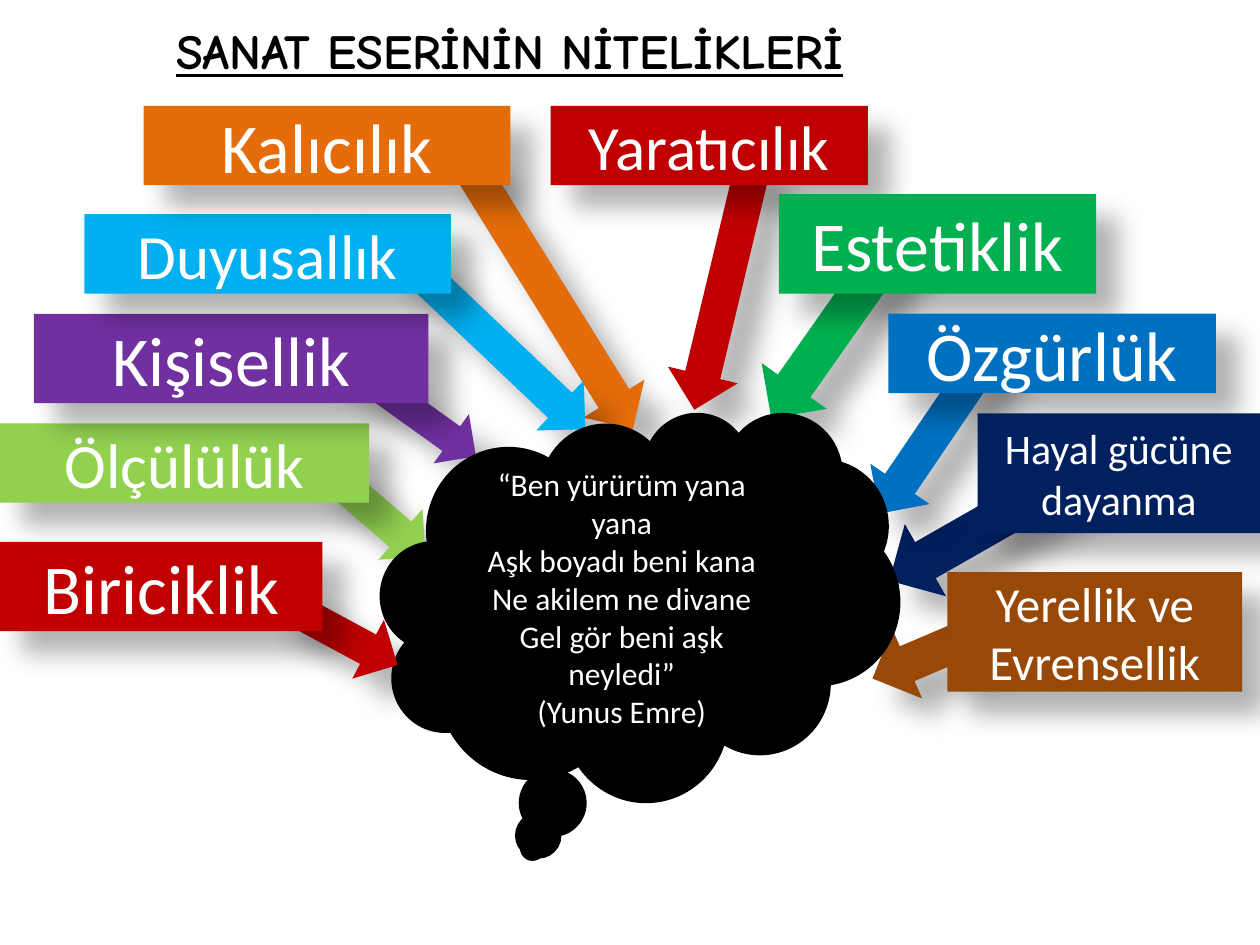
import pptx
import pptx.util
import pptx.dml.color
import pptx.enum.shapes
import pptx.enum.text
import pptx.oxml
import pptx.oxml.ns

Pt = pptx.util.Pt
SHAPE = pptx.enum.shapes.MSO_SHAPE
ALIGN = pptx.enum.text.PP_ALIGN
ANCHOR = pptx.enum.text.MSO_ANCHOR

COLORS = {
    "black": "000000", "white": "FFFFFF", "brown": "984807", "navy": "002060",
    "blue": "0070C0", "green": "00B050", "red": "C00000", "orange": "E46C0A",
    "sky": "00B0F0", "purple": "7030A0", "lime": "92D050",
}

TITLE = "SANAT ESERİNİN NİTELİKLERİ"
TITLE_BOX = (93.6, 7.9, 483.8, 41)
POEM = [
    "“Ben yürürüm yana yana",
    "Aşk boyadı beni kana",
    "Ne akilem ne divane",
    "Gel gör beni aşk neyledi”",
    "(Yunus Emre)",
]
CLOUD_BOX = (218.2, 236.2, 295.2, 221)

# preset, colour, (left, top, width, height), rotation
ARROWS = [
    (SHAPE.LEFT_ARROW, "brown", (493.9, 343.4, 115.9, 43.2), 336.9),
    (SHAPE.RIGHT_ARROW, "navy", (497.5, 267.8, 162.7, 47.5), 150.3),
    (SHAPE.DOWN_ARROW, "blue", (513.4, 192.2, 41, 110.9), 34.2),
    (SHAPE.DOWN_ARROW, "green", (454.3, 124.6, 45.4, 126), 35.1),
    (SHAPE.RIGHT_ARROW, "red", (341.3, 143.3, 144.7, 41), 103.5),
    (SHAPE.RIGHT_ARROW, "orange", (220.3, 146.2, 185, 41), 58.1),
    (SHAPE.RIGHT_ARROW, "sky", (205.9, 174.2, 149, 39.6), 43.5),
    (SHAPE.RIGHT_ARROW, "purple", (166.3, 209.5, 116.6, 34.6), 35.6),
    (SHAPE.RIGHT_ARROW, "lime", (175.7, 273.6, 77, 38.2), 40.8),
]
FRONT_ARROW = (SHAPE.RIGHT_ARROW, "red", (154.8, 342.7, 77, 38.2), 28.3)

# text, colour, (left, top, width, height), font size
QUALITIES = [
    ("Biriciklik", "red", (0, 309.6, 184.3, 51.1), 40),
    ("Ölçülülük", "lime", (0, 241.9, 211, 45.4), 36),
    ("Kişisellik", "purple", (19.4, 179.3, 225.4, 51.1), 40),
    ("Duyusallık", "sky", (48.2, 122.4, 209.5, 45.4), 36),
    ("Kalıcılık", "orange", (82.1, 60.5, 209.5, 45.4), 40),
    ("Yaratıcılık", "red", (314.6, 60.5, 181.4, 45.4), 36),
    ("Estetiklik", "green", (445, 110.9, 181.4, 56.9), 40),
    ("Özgürlük", "blue", (507.6, 179.3, 187.2, 45.4), 40),
    ("Hayal gücüne dayanma", "navy", (558.7, 236.2, 161.3, 68.4), 24),
    ("Yerellik ve Evrensellik", "brown", (541.4, 326.9, 168.5, 68.4), 28),
]

SHADOW = (
    f'<a:effectLst {pptx.oxml.ns.nsdecls("a")}>'
    f'<a:outerShdw blurRad="{Pt(15)}" dist="{Pt(18)}" dir="2700000" '
    'algn="tl" rotWithShape="0">'
    f'<a:srgbClr val="{COLORS["black"]}"><a:alpha val="30000"/></a:srgbClr>'
    "</a:outerShdw></a:effectLst>"
)


def rgb(name):
    return pptx.dml.color.RGBColor.from_string(COLORS[name])


def add_filled(slide, preset, box, color, shadow=True):
    shape = slide.shapes.add_shape(preset, *map(Pt, box))
    shape.fill.solid()
    shape.fill.fore_color.rgb = rgb(color)
    shape.line.fill.background()
    shape.shadow.inherit = False
    if shadow:
        properties = shape._element.spPr
        properties.replace(properties.find(pptx.oxml.ns.qn("a:effectLst")),
                           pptx.oxml.parse_xml(SHADOW))
    return shape


def add_arrow(slide, preset, color, box, rotation):
    add_filled(slide, preset, box, color).rotation = rotation


def write(shape, lines, size, color="white", font="Calibri",
          align=ALIGN.CENTER, anchor=ANCHOR.MIDDLE):
    """Put one paragraph per line into the shape and return the runs."""
    frame = shape.text_frame
    frame.word_wrap = True
    frame.vertical_anchor = anchor
    runs = []
    for index, line in enumerate(lines):
        paragraph = frame.add_paragraph() if index else frame.paragraphs[0]
        paragraph.alignment = align
        run = paragraph.add_run()
        run.text = line
        run.font.size = Pt(size)
        run.font.name = font
        run.font.color.rgb = rgb(color)
        runs.append(run)
    return runs


def main():
    presentation = pptx.Presentation()
    presentation.slide_width, presentation.slide_height = Pt(720), Pt(540)
    slide = presentation.slides.add_slide(presentation.slide_layouts[6])

    for arrow in ARROWS:
        add_arrow(slide, *arrow)

    cloud = add_filled(slide, SHAPE.CLOUD_CALLOUT, CLOUD_BOX, "black", shadow=False)
    cloud.line.color.rgb = rgb("black")
    cloud.line.width = Pt(2)
    write(cloud, POEM, 18)

    title = slide.shapes.add_textbox(*map(Pt, TITLE_BOX))
    for run in write(title, [TITLE], 28, "black", "Comic Neue",
                     ALIGN.LEFT, ANCHOR.TOP):
        run.font.bold = True
        run.font.underline = True
    title.text_frame.auto_size = pptx.enum.text.MSO_AUTO_SIZE.SHAPE_TO_FIT_TEXT

    add_arrow(slide, *FRONT_ARROW)
    for text, color, box, size in QUALITIES:
        write(add_filled(slide, SHAPE.RECTANGLE, box, color), [text], size)

    presentation.save("out.pptx")


if __name__ == "__main__":
    main()
